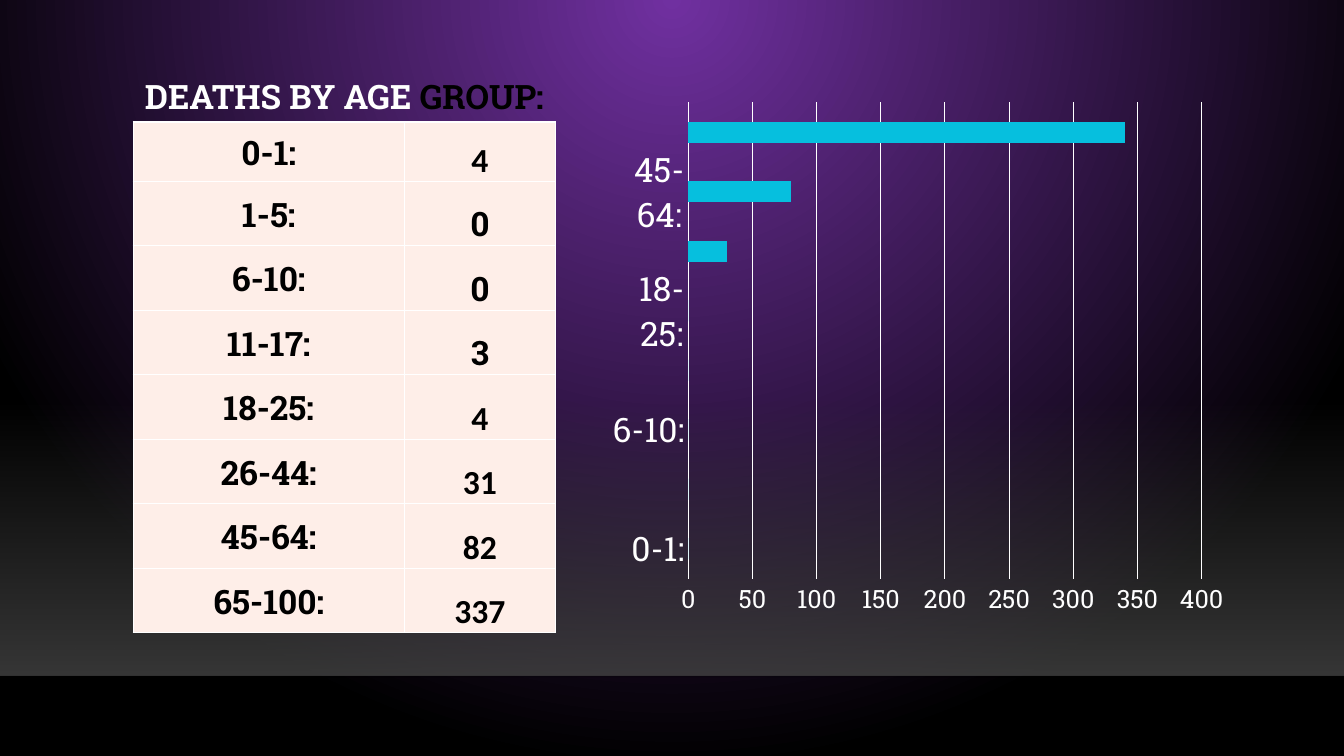
from lxml import etree
from pptx import Presentation
from pptx import util as u
from pptx.chart.data import CategoryChartData
from pptx.dml.color import RGBColor
from pptx.enum import chart as charts, shapes, text
from pptx.oxml.ns import qn

WIDTH, HEIGHT = u.Inches(13.33), u.Inches(7.5)
SLAB, NUMERAL = "Roboto Slab", "Calibri"
WHITE, BLACK = "FFFFFF", "000000"
DEATHS = {"0-1:": 4, "1-5:": 0, "6-10:": 0, "11-17:": 3,
          "18-25:": 4, "26-44:": 31, "45-64:": 82, "65-100:": 337}
SLAB_COUNTS = ("1-5:", "6-10:", "11-17:")


def colour(code):
    return RGBColor.from_string(code)


def set_font(font, size, code, name=SLAB, bold=False):
    font.size, font.name, font.bold = u.Pt(size), name, bold
    font.color.rgb = colour(code)


def set_line(line, code, points):
    line.color.rgb = colour(code)
    line.width = u.Pt(points)


def set_gradient(fill, *codes):
    fill.gradient()
    for stop, code in zip(fill.gradient_stops, codes):
        stop.color.rgb = colour(code)


def add_alpha(element, *percents):
    for tint, percent in zip(element.iter(qn("a:srgbClr")), percents):
        etree.SubElement(tint, qn("a:alpha"), val=str(percent * 1000))


def paint_background(page):
    # Purple glow spreading from the middle of the top edge
    set_gradient(page.background.fill, "7030A0", BLACK)
    gradient = next(page.element.iter(qn("a:gradFill")))
    gradient.remove(gradient.find(qn("a:lin")))
    glow = etree.SubElement(gradient, qn("a:path"), path="circle")
    etree.SubElement(glow, qn("a:fillToRect"),
                     l="43000", t="0", r="43000", b="100000")


def add_floor(page):
    # Grey haze with a faint line along its lower edge
    top, bottom = u.Inches(3.96), u.Inches(6.7)
    haze = page.shapes.add_shape(shapes.MSO_SHAPE.RECTANGLE,
                                 0, top, WIDTH, bottom - top)
    haze.shadow.inherit = False
    haze.line.fill.background()
    set_gradient(haze.fill, "454545", "454545")
    haze.fill.gradient_angle = 270
    add_alpha(haze.element.spPr, 0, 80)

    edge_y = u.Inches(6.71)
    edge = page.shapes.add_connector(shapes.MSO_CONNECTOR.STRAIGHT,
                                     0, edge_y, WIDTH, edge_y)
    set_line(edge.line, "000001", 1)
    add_alpha(edge.element.spPr, 20)
    etree.SubElement(edge.element.spPr, qn("a:effectLst"))


def set_title(page, left, top, width, height):
    title = page.shapes.title
    title.left, title.top, title.width, title.height = left, top, width, height
    frame = title.text_frame
    frame.vertical_anchor = text.MSO_ANCHOR.BOTTOM
    para = frame.paragraphs[0]
    para.alignment, para.line_spacing = text.PP_ALIGN.CENTER, 0.9
    for words, code in (("DEATHS BY AGE", WHITE), (" GROUP:", BLACK)):
        span = para.add_run()
        span.text = words
        set_font(span.font, 24, code, bold=True)


def border_cell(cell):
    props = cell._tc.get_or_add_tcPr()
    for index, side in enumerate(("a:lnL", "a:lnR", "a:lnT", "a:lnB")):
        line = etree.Element(qn(side), w=str(u.Pt(1)))
        solid = etree.SubElement(line, qn("a:solidFill"))
        etree.SubElement(solid, qn("a:srgbClr"), val=WHITE)
        props.insert(index, line)


def fill_cell(cell, words, font_name, anchor):
    cell.text = words
    cell.vertical_anchor = anchor
    cell.margin_left = cell.margin_right = cell.margin_top = u.Inches(0.01)
    cell.margin_bottom = 0
    cell.fill.solid()
    cell.fill.fore_color.rgb = colour("FEEEE8")
    border_cell(cell)
    para = cell.text_frame.paragraphs[0]
    para.alignment = text.PP_ALIGN.CENTER
    set_font(para.font, 24, BLACK, font_name, bold=True)


def add_death_table(page, left, top, width, height):
    table = page.shapes.add_table(len(DEATHS), 2, left, top, width, height).table
    table.first_row = table.horz_banding = False
    table.columns[0].width = u.Inches(2.69)
    table.columns[1].width = width - u.Inches(2.69)
    for index, (group, count) in enumerate(DEATHS.items()):
        table.rows[index].height = u.Inches(0.64 if index else 0.59)
        count_font = SLAB if group in SLAB_COUNTS else NUMERAL
        fill_cell(table.cell(index, 0), group, SLAB, text.MSO_ANCHOR.MIDDLE)
        fill_cell(table.cell(index, 1), str(count), count_font,
                  text.MSO_ANCHOR.BOTTOM)


def add_death_chart(page, left, top, width, height):
    # Bars are read off the axis, to the nearest ten
    data = CategoryChartData()
    data.categories = list(DEATHS)
    data.add_series("Series 1", [round(count, -1) for count in DEATHS.values()])
    chart = page.shapes.add_chart(charts.XL_CHART_TYPE.BAR_CLUSTERED,
                                  left, top, width, height, data).chart
    chart.has_legend = chart.has_title = False
    set_font(chart.font, 10, WHITE)

    plot = chart.plots[0]
    plot.gap_width, plot.vary_by_categories = 182, False
    bars = plot.series[0].format.fill
    bars.solid()
    bars.fore_color.rgb = colour("06BFDE")

    groups, counts = chart.category_axis, chart.value_axis
    for axis, size in ((groups, 24), (counts, 18)):
        axis.major_tick_mark = axis.minor_tick_mark = charts.XL_TICK_MARK.NONE
        set_font(axis.tick_labels.font, size, WHITE)
    set_line(groups.format.line, WHITE, 0.75)
    counts.format.line.fill.background()
    counts.minimum_scale, counts.maximum_scale, counts.major_unit = 0, 400, 50
    set_line(counts.major_gridlines.format.line, WHITE, 0.75)


def main():
    deck = Presentation()
    deck.slide_width, deck.slide_height = WIDTH, HEIGHT
    page = deck.slides.add_slide(deck.slide_layouts[5])
    paint_background(page)
    add_floor(page)

    # Title above the table on the left, chart on the right
    left, width, split = u.Inches(1.32), u.Inches(4.19), u.Inches(1.21)
    title_height = u.Inches(1.04)
    set_title(page, left, split - title_height, width, title_height)
    add_death_table(page, left, split, width, u.Inches(5.07))
    add_death_chart(page, u.Inches(5.95), u.Inches(0.91),
                    u.Inches(6.31), u.Inches(5.31))
    deck.save("out.pptx")


if __name__ == "__main__":
    main()
